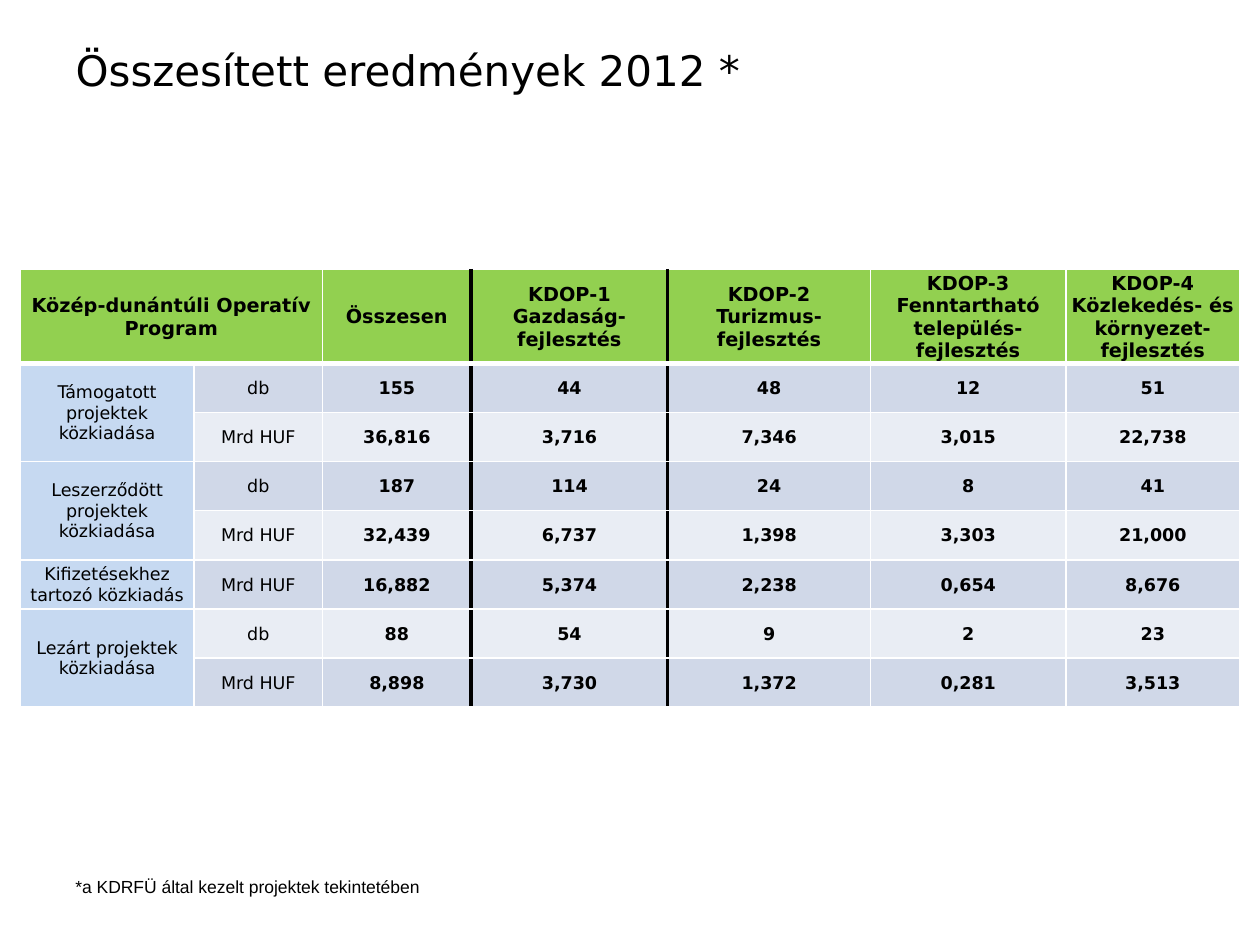
from lxml.etree import SubElement
from pptx import Presentation
from pptx.dml.color import RGBColor
from pptx.enum.text import MSO_ANCHOR as ANCHOR, MSO_AUTO_SIZE as AUTO_SIZE, PP_ALIGN as ALIGN
from pptx.oxml.ns import qn
from pptx.util import Inches, Pt

COLORS = {"text": "000000", "header": "92D050", "label": "C6D9F1",
          "band": "D0D8E8", "band_light": "E9EDF4", "line": "FFFFFF", "divider": "000000"}
GRID_COLS, GRID_ROWS = 100, 75

COL_WIDTHS = [13.8, 10.2, 11.8, 15.6, 16.1, 15.5, 13.8]
ROW_HEIGHT = 3.9
DIVIDED_COLS = (2, 3)  # columns with a heavy line on their right
HEADER = ["Közép-dunántúli Operatív Program", "", "Összesen",
          "KDOP-1\nGazdaság-fejlesztés", "KDOP-2\nTurizmus-fejlesztés",
          "KDOP-3\nFenntartható település-fejlesztés",
          "KDOP-4\nKözlekedés- és környezet-fejlesztés"]
RESULTS = [
    ("Támogatott projektek közkiadása", [
        ["db", "155", "44", "48", "12", "51"],
        ["Mrd HUF", "36,816", "3,716", "7,346", "3,015", "22,738"]]),
    ("Leszerződött projektek közkiadása", [
        ["db", "187", "114", "24", "8", "41"],
        ["Mrd HUF", "32,439", "6,737", "1,398", "3,303", "21,000"]]),
    ("Kifizetésekhez tartozó közkiadás", [
        ["Mrd HUF", "16,882", "5,374", "2,238", "0,654", "8,676"]]),
    ("Lezárt projektek közkiadása", [
        ["db", "88", "54", "9", "2", "23"],
        ["Mrd HUF", "8,898", "3,730", "1,372", "0,281", "3,513"]]),
]


class Deck:
    """Style and current slide; lengths are columns and rows of a 100 x 75 grid."""

    font = "DejaVu Sans"
    note_font = "Arial"

    def __init__(self):
        self.prs = Presentation()
        self.prs.slide_width, self.prs.slide_height = Inches(10), Inches(7.5)
        self.s = self.prs.slides.add_slide(self.prs.slide_layouts[5])

    def x(self, cols):
        return round(self.prs.slide_width * cols / GRID_COLS)

    def y(self, rows):
        return round(self.prs.slide_height * rows / GRID_ROWS)

    def box(self, left, top, width, height):
        return self.x(left), self.y(top), self.x(width), self.y(height)

    def add_text(self, tf, text, size, bold=False, align=ALIGN.LEFT, font=None):
        for i, line in enumerate(text.split("\n")):
            p = tf.add_paragraph() if i else tf.paragraphs[0]
            p.alignment = align
            r = p.add_run()
            r.text = line
            r.font.name, r.font.size, r.font.bold = font or self.font, Pt(size), bold
            r.font.color.rgb = RGBColor.from_string(COLORS["text"])

    def title(self, text, *at):
        sp = self.s.shapes.title
        sp.left, sp.top, sp.width, sp.height = self.box(*at)
        sp.text_frame.vertical_anchor = ANCHOR.TOP
        self.add_text(sp.text_frame, text, 24)

    def note(self, text, *at):
        tf = self.s.shapes.add_textbox(*self.box(*at)).text_frame
        tf.word_wrap = True
        tf.auto_size = AUTO_SIZE.SHAPE_TO_FIT_TEXT
        self.add_text(tf, text, 10, font=self.note_font)

    def table(self, rows, cols, *at):
        frame = self.s.shapes.add_table(rows, cols, *self.box(*at))
        for col, width in zip(frame.table.columns, COL_WIDTHS):
            col.width = self.x(width)
        for row in frame.table.rows:
            row.height = self.y(ROW_HEIGHT)
        frame.height = self.y(at[3])
        return frame.table

    def borders(self, cell, row, col):
        edges = {"L": col - 1 in DIVIDED_COLS, "R": col in DIVIDED_COLS, "T": False, "B": False}
        tc_pr = cell._tc.get_or_add_tcPr()
        for i, (side, heavy) in enumerate(edges.items()):
            width = 2.25 if heavy else 3 if side == "B" and row == 0 else 1
            ln = SubElement(tc_pr, qn(f"a:ln{side}"), w=str(Pt(width)))
            tc_pr.insert(i, ln)
            fill = SubElement(ln, qn("a:solidFill"))
            SubElement(fill, qn("a:srgbClr"), val=COLORS["divider" if heavy else "line"])

    def cell(self, table, row, col, text, color, size=10, bold=False):
        cell = table.cell(row, col)
        cell.margin_left = cell.margin_right = cell.margin_top = Inches(0.01)
        cell.margin_bottom = 0
        cell.vertical_anchor = ANCHOR.MIDDLE
        cell.fill.solid()
        cell.fill.fore_color.rgb = RGBColor.from_string(COLORS[color])
        self.borders(cell, row, col)
        if text:
            self.add_text(cell.text_frame, text, size, bold, ALIGN.CENTER)

    def results(self, *at):
        count = sum(len(lines) for _, lines in RESULTS)
        table = self.table(count + 1, len(HEADER), *at)
        for col, text in enumerate(HEADER):
            self.cell(table, 0, col, text, "header", 11, True)
        table.cell(0, 0).merge(table.cell(0, 1))
        row = 1
        for label, lines in RESULTS:
            first = row
            for line in lines:
                self.cell(table, row, 0, label if row == first else "", "label")
                for col, text in enumerate(line, 1):
                    self.cell(table, row, col, text, "band" if row % 2 else "band_light", bold=col > 1)
                row += 1
            if len(lines) > 1:
                table.cell(first, 0).merge(table.cell(row - 1, 0))


def main():
    deck = Deck()
    deck.title("Összesített eredmények 2012 *", 5, 3, 90, 12.5)
    deck.note("*a KDRFÜ által kezelt projektek tekintetében", 5, 69, 39.4, 2.7)
    deck.results(1.6, 21.4, 96.9, 34.9)
    deck.prs.save("out.pptx")


if __name__ == "__main__":
    main()
